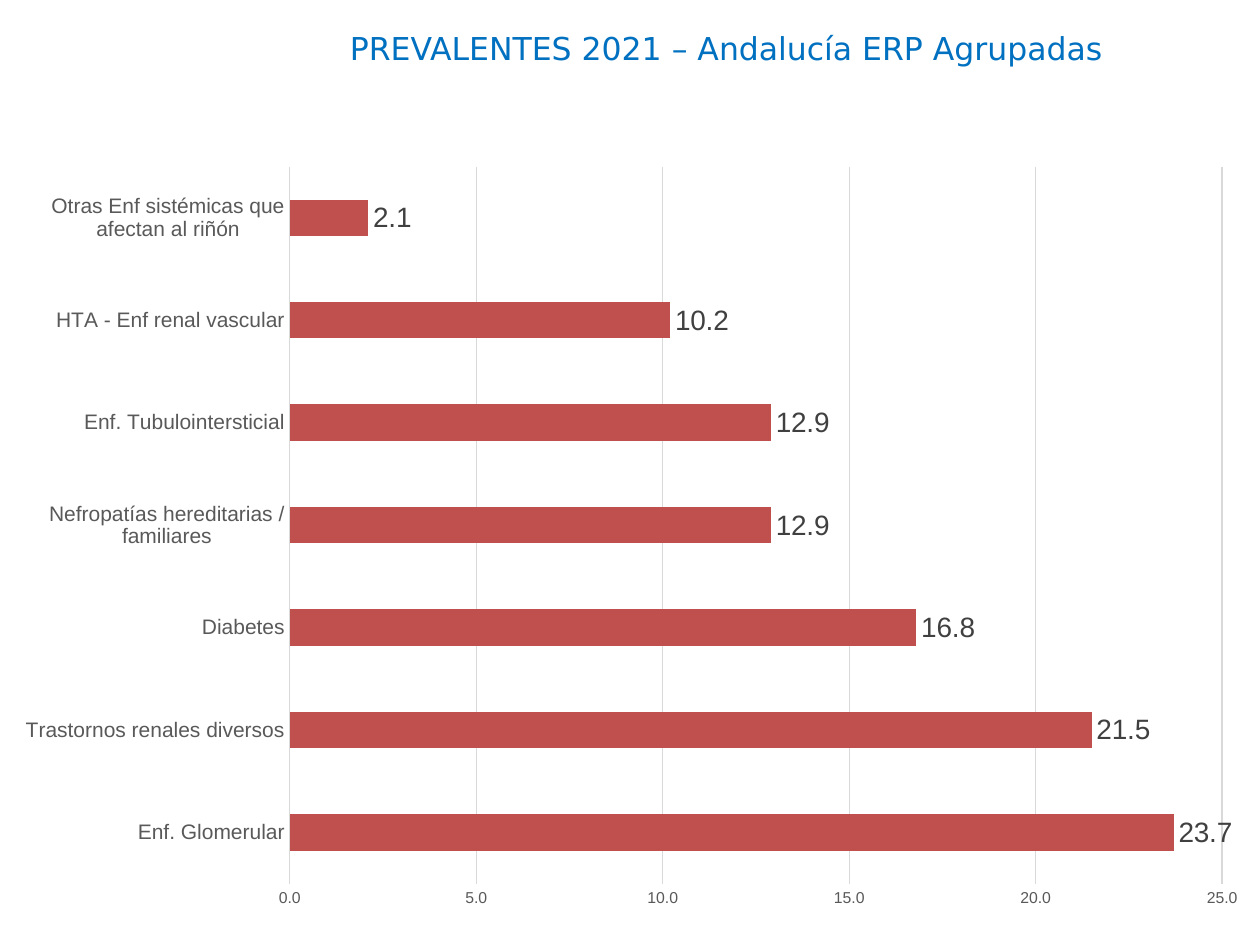
from lxml.etree import SubElement
from pptx import Presentation
from pptx.chart.data import CategoryChartData
from pptx.dml.color import RGBColor
from pptx.enum.chart import XL_CHART_TYPE, XL_LABEL_POSITION, XL_TICK_MARK
from pptx.enum.text import PP_ALIGN
from pptx.oxml.ns import qn
from pptx.util import Inches, Pt

BLUE = RGBColor(0x00, 0x70, 0xC0)
RED = RGBColor(0xC0, 0x50, 0x4D)
BLACK = RGBColor(0x00, 0x00, 0x00)
DARK = RGBColor(0x40, 0x40, 0x40)
GREY = RGBColor(0x59, 0x59, 0x59)
PALE = RGBColor(0xD9, 0xD9, 0xD9)

CAUSES = [
    ("Enf. Glomerular", 23.7),
    ("Trastornos renales diversos", 21.5),
    ("Diabetes", 16.8),
    ("Nefropatías hereditarias / familiares", 12.9),
    ("Enf. Tubulointersticial", 12.9),
    ("HTA - Enf renal vascular", 10.2),
    ("Otras Enf sistémicas que afectan al riñón", 2.1),
]


class Deck:
    """Holds the style and the current slide."""

    head = "DejaVu Sans"
    body = "Arial"
    form = "0.0"

    def __init__(self, wide, high):
        self.show = Presentation()
        self.show.slide_width = Inches(wide)
        self.show.slide_height = Inches(high)
        self.slide = self.show.slides.add_slide(self.show.slide_layouts[6])

    def font(self, font, name, size, color):
        font.name = name
        font.size = Pt(size)
        font.color.rgb = color

    def line(self, line):
        line.color.rgb = PALE
        line.width = Pt(0.75)

    def title(self, text, box):
        frame = self.slide.shapes.add_textbox(*map(Inches, box)).text_frame
        frame.word_wrap = True
        para = frame.paragraphs[0]
        para.alignment = PP_ALIGN.CENTER
        run = para.add_run()
        run.text = text
        self.font(run.font, self.head, 18, BLUE)

    def axis(self, axis, size):
        axis.major_tick_mark = XL_TICK_MARK.NONE
        axis.minor_tick_mark = XL_TICK_MARK.NONE
        self.font(axis.tick_labels.font, self.body, size, GREY)

    def layout(self, chart, area):
        plot = chart.plots[0]._element.getparent()
        node = plot.find(qn("c:layout"))
        if node is None:
            node = SubElement(plot, qn("c:layout"))
            plot.insert(0, node)
        manual = SubElement(node, qn("c:manualLayout"))
        rules = [("layoutTarget", "inner"), ("xMode", "edge"), ("yMode", "edge")]
        for tag, val in rules + list(zip("xywh", area)):
            SubElement(manual, qn("c:" + tag)).set("val", str(val))

    def bars(self, name, rows, box, area):
        data = CategoryChartData(number_format=self.form)
        data.categories = [label for label, _ in rows]
        data.add_series(name, [value for _, value in rows])
        frame = self.slide.shapes.add_chart(
            XL_CHART_TYPE.BAR_CLUSTERED, *map(Inches, box), data)
        chart = frame.chart
        chart.has_title = False
        chart.has_legend = False
        self.font(chart.font, self.body, 10, BLACK)
        self.layout(chart, area)

        self.axis(chart.category_axis, 12)
        self.line(chart.category_axis.format.line)
        scale = chart.value_axis
        self.axis(scale, 9)
        scale.format.line.fill.background()
        scale.has_major_gridlines = True
        self.line(scale.major_gridlines.format.line)
        scale.minimum_scale, scale.maximum_scale = 0, 25
        scale.major_unit = 5
        scale.tick_labels.number_format = self.form
        scale.tick_labels.number_format_is_linked = False

        plot = chart.plots[0]
        plot.gap_width = 182
        plot.vary_by_categories = False
        fill = plot.series[0].format.fill
        fill.solid()
        fill.fore_color.rgb = RED
        tags = plot.series[0].data_labels
        tags.show_value = True
        tags.position = XL_LABEL_POSITION.OUTSIDE_END
        tags.number_format = self.form
        tags.number_format_is_linked = False
        self.font(tags.font, self.body, 16, DARK)

    def save(self):
        self.show.save("out.pptx")


def main():
    deck = Deck(10, 7.5)
    deck.title("PREVALENTES 2021 – Andalucía ERP Agrupadas", (2.22, 0.18, 7.09, 0.4))
    deck.bars("Series 1", CAUSES, (0, 1.2, 10, 6.12), (0.23, 0.02, 0.74, 0.93))
    deck.save()


if __name__ == "__main__":
    main()
